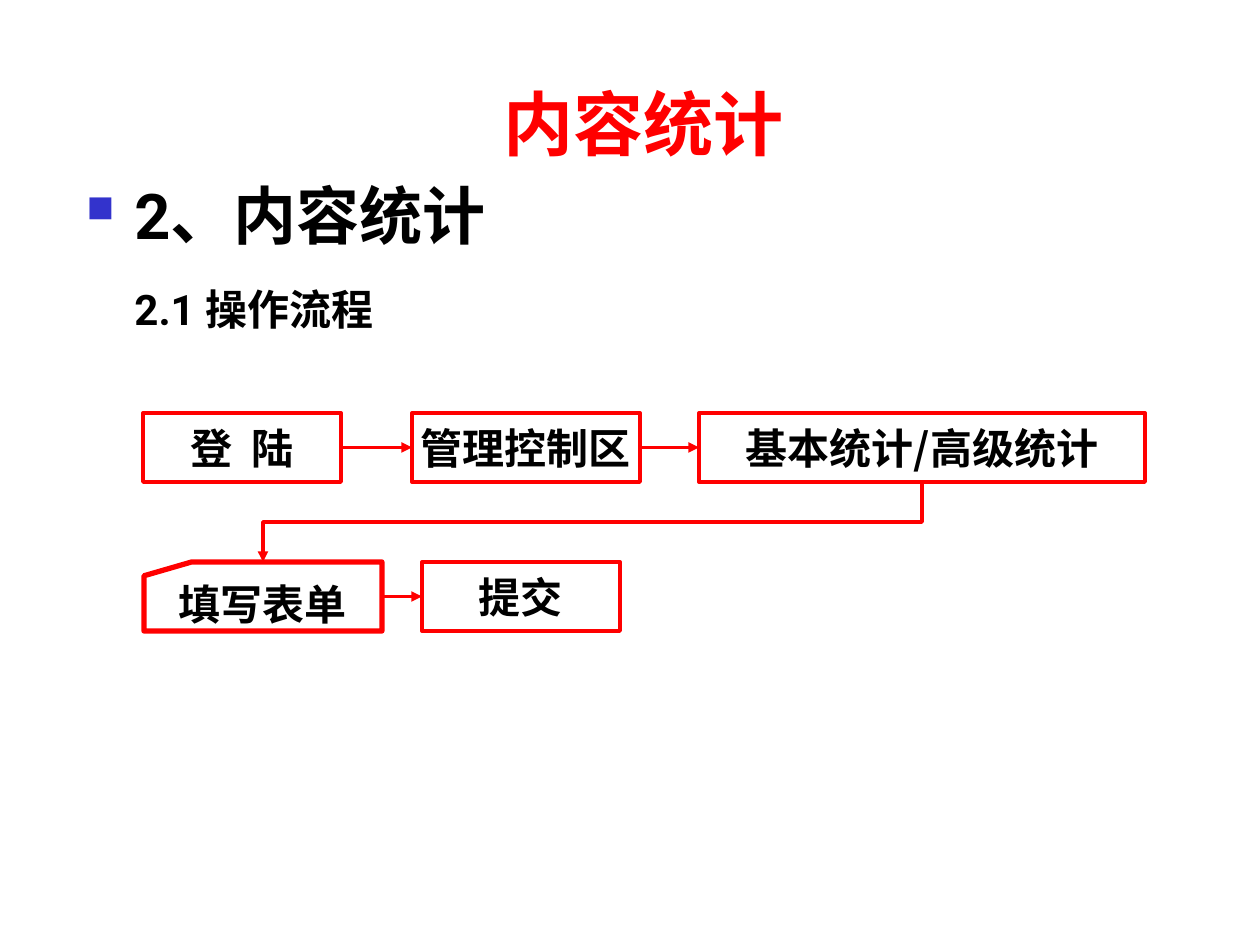
from lxml.etree import SubElement
from pptx import Presentation
from pptx.dml.color import RGBColor
from pptx.enum.shapes import MSO_CONNECTOR, MSO_SHAPE
from pptx.enum.text import MSO_ANCHOR, PP_ALIGN
from pptx.oxml.ns import qn
from pptx.util import Emu, Pt

PX = 914400 // 126
COLORS = {"red": "FF0000", "black": "000000", "bullet": "3333CC"}
LATIN, CJK = "Roboto", "Noto Sans CJK SC"

# Content
TITLE = "内容统计"
HEADING = "2、内容统计"
SUBHEADING = "2.1 操作流程"
BOX_H = 69
# Each row: top, then (text, left, width, shape, line width, font)
ROWS = [
    (413, [("登  陆", 143, 198, MSO_SHAPE.RECTANGLE, 2.25, CJK),
           ("管理控制区", 412, 228, MSO_SHAPE.RECTANGLE, 2.25, CJK),
           ("基本统计/高级统计", 699, 446, MSO_SHAPE.RECTANGLE, 2.25, CJK)]),
    (562, [("填写表单", 144, 238, MSO_SHAPE.FLOWCHART_CARD, 3, LATIN),
           ("提交", 422, 198, MSO_SHAPE.RECTANGLE, 2.25, CJK)]),
]


def px(*values):
    return [Emu(round(v * PX)) for v in values]


def rgb(name):
    return RGBColor.from_string(COLORS[name])


def add_text(p, text, size=24, color="black", font=LATIN, align=PP_ALIGN.LEFT, before=0):
    p.alignment = align
    p.space_before = Pt(before)
    r = p.add_run()
    r.text = text
    r.font.size, r.font.bold, r.font.name = Pt(size), True, font
    r.font.color.rgb = rgb(color)
    SubElement(r.font._element, qn("a:ea"), typeface=font)


def add_box(text, left, top, width, shape, line, font):
    s = slide.shapes.add_shape(shape, *px(left, top, width, BOX_H))
    s.shadow.inherit = False
    s.fill.background()
    s.line.color.rgb, s.line.width = rgb("red"), Pt(line)
    tf = s.text_frame
    tf.word_wrap, tf.vertical_anchor = False, MSO_ANCHOR.MIDDLE
    add_text(tf.paragraphs[0], text, font=font, align=PP_ALIGN.CENTER)
    return s


def add_arrow(kind, *ends):
    c = slide.shapes.add_connector(kind, *ends)
    c.line.color.rgb, c.line.width = rgb("red"), Pt(2)
    SubElement(c.line._get_or_add_ln(), qn("a:tailEnd"), type="triangle")
    SubElement(c._element.spPr, qn("a:effectLst"))
    return c


prs = Presentation()
prs.slide_width, prs.slide_height = px(1260, 945)
slide = prs.slides.add_slide(prs.slide_layouts[6])

# Headings
tf = slide.shapes.add_textbox(*px(74, 165, 1103, 538)).text_frame
tf.word_wrap = True
tf.margin_top, = px(11)
p = tf.paragraphs[0]
pPr = p._p.get_or_add_pPr()
pPr.set("marL", str(48 * PX))
pPr.set("indent", str(-48 * PX))
SubElement(SubElement(pPr, qn("a:buClr")), qn("a:srgbClr"), val=COLORS["bullet"])
SubElement(pPr, qn("a:buSzPct"), val="60000")
SubElement(pPr, qn("a:buChar"), char="■")
add_text(p, HEADING, size=36)
p = tf.add_paragraph()
p._p.get_or_add_pPr().set("marL", str(48 * PX))
add_text(p, SUBHEADING, before=18)

# Title
tf = slide.shapes.add_textbox(*px(105, 66, 1077, 105)).text_frame
tf.word_wrap, tf.vertical_anchor = True, MSO_ANCHOR.BOTTOM
add_text(tf.paragraphs[0], TITLE, size=40, color="red", align=PP_ALIGN.CENTER)

# Flow boxes, joined left to right within each row
flow = []
for top, boxes in ROWS:
    row = [add_box(text, left, top, *rest) for text, left, *rest in boxes]
    for a, b in zip(row, row[1:]):
        c = add_arrow(MSO_CONNECTOR.STRAIGHT, 0, 0, 0, 0)
        c.begin_connect(a, 3)
        c.end_connect(b, 1)
    flow.append(row)

# Elbow from the end of the first row to the start of the second:
# a quarter turn makes it leave downwards, so its frame is swapped about the centre
start, end = flow[0][-1], flow[1][0]
x1, y1 = start.left + start.width // 2, start.top + start.height
x2, y2 = end.left + end.width // 2, end.top
cx, cy = (x1 + x2) // 2, (y1 + y2) // 2
half_w, half_h = (y2 - y1) // 2, (x1 - x2) // 2
c = add_arrow(MSO_CONNECTOR.ELBOW, Emu(cx - half_w), Emu(cy - half_h),
              Emu(cx + half_w), Emu(cy + half_h))
c._element.spPr.find(qn("a:xfrm")).set("rot", str(90 * 60000))

prs.save("out.pptx")
